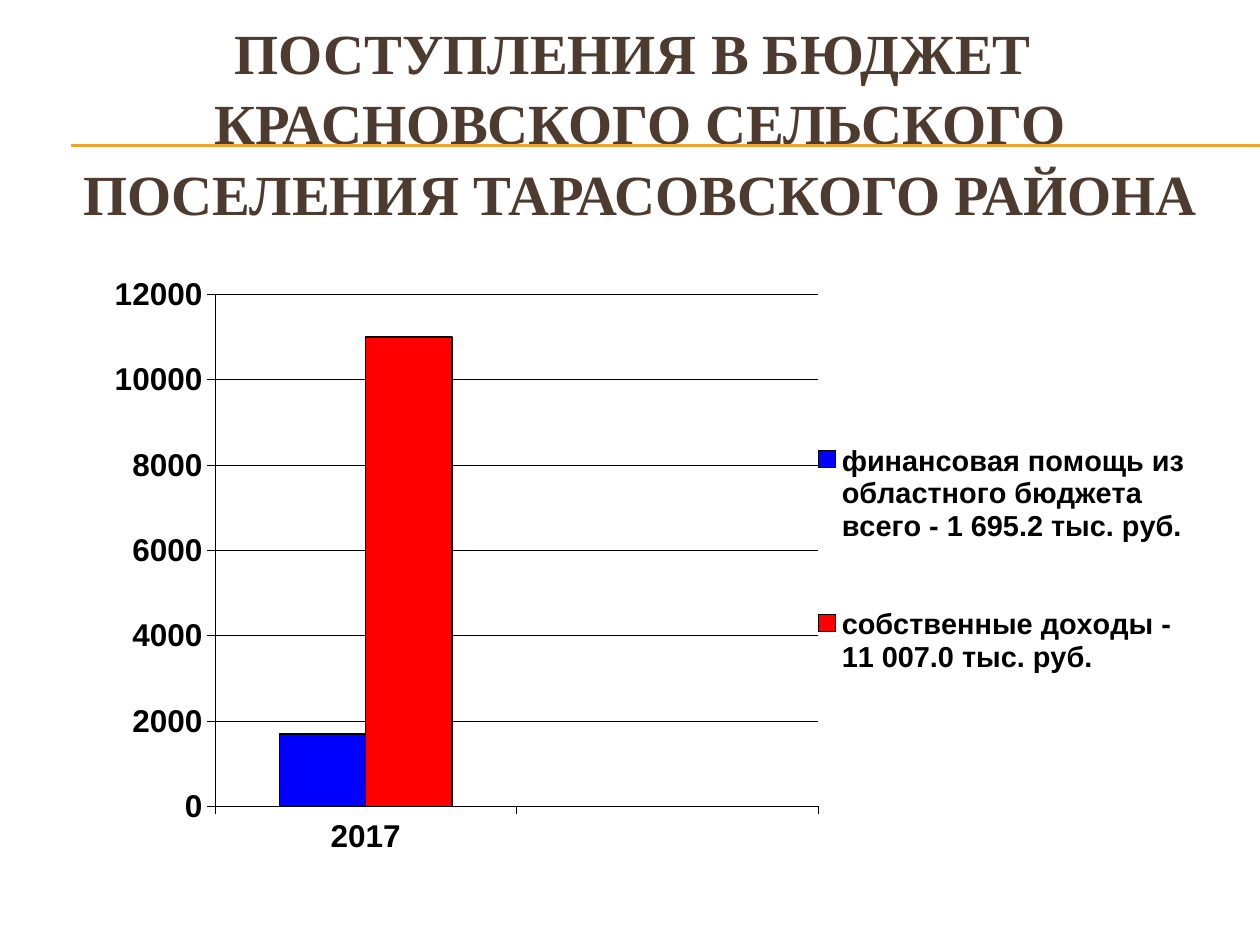
from dataclasses import dataclass

from lxml import etree
from pptx import Presentation
from pptx.chart.data import CategoryChartData
from pptx.dml.color import RGBColor
from pptx.enum.chart import XL_CHART_TYPE, XL_LEGEND_POSITION, XL_TICK_LABEL_POSITION, XL_TICK_MARK
from pptx.enum.shapes import MSO_CONNECTOR
from pptx.enum.text import MSO_ANCHOR, MSO_AUTO_SIZE, PP_ALIGN
from pptx.oxml.ns import qn
from pptx.util import Inches, Pt

COLUMN = XL_CHART_TYPE.COLUMN_CLUSTERED
RIGHT = XL_LEGEND_POSITION.RIGHT
LOW = XL_TICK_LABEL_POSITION.LOW
OUT, NONE = XL_TICK_MARK.OUTSIDE, XL_TICK_MARK.NONE
STRAIGHT = MSO_CONNECTOR.STRAIGHT
MIDDLE = MSO_ANCHOR.MIDDLE
FIXED = MSO_AUTO_SIZE.NONE
CENTER = PP_ALIGN.CENTER


@dataclass(frozen=True)
class Theme:
    brown: str = "4E3B30"
    gold: str = "F0A22E"
    black: str = "000000"
    aid: str = "0000FF"
    own: str = "FF0000"
    serif: str = "Times New Roman"
    sans: str = "Arial"
    head: float = 32.4
    axis: float = 18
    key: float = 16.5


class Deck:
    def __init__(self, theme):
        self.theme = theme
        self.file = Presentation()
        self.file.slide_width = Inches(10)
        self.file.slide_height = Inches(7.5)
        self.slide = self.file.slides.add_slide(self.file.slide_layouts[5])

    def font(self, font, name, size, color):
        font.name, font.size, font.bold = name, Pt(size), True
        font.color.rgb = RGBColor.from_string(color)

    def stroke(self, line, color, width):
        line.color.rgb = RGBColor.from_string(color)
        line.width = Pt(width)

    def rule(self, left, top, right):
        line = self.slide.shapes.add_connector(
            STRAIGHT, Inches(left), Inches(top), Inches(right), Inches(top))
        self.stroke(line.line, self.theme.gold, 0.75)
        etree.SubElement(line.element.spPr, qn("a:effectLst"))

    def title(self, lines, left, top, width, height):
        box = self.slide.shapes.title
        box.left, box.top = Inches(left), Inches(top)
        box.width, box.height = Inches(width), Inches(height)
        frame = box.text_frame
        frame.word_wrap = True
        frame.auto_size = FIXED
        frame.vertical_anchor = MIDDLE
        para = frame.paragraphs[0]
        para.alignment = CENTER
        para.line_spacing = 1.04
        for i, text in enumerate(lines):
            if i:
                para.add_line_break()
            run = para.add_run()
            run.text = text
            self.font(run.font, self.theme.serif, self.theme.head, self.theme.brown)

    def place(self, part, index, box, inner=False):
        """Give a chart part a fixed place, in fractions of the chart."""
        for old in part.findall(qn("c:layout")):
            part.remove(old)
        layout = etree.Element(qn("c:layout"))
        part.insert(index, layout)
        manual = etree.SubElement(layout, qn("c:manualLayout"))
        marks = [("layoutTarget", "inner")] if inner else []
        marks += [("xMode", "edge"), ("yMode", "edge")]
        marks += zip("xywh", box)
        for tag, value in marks:
            etree.SubElement(manual, qn(f"c:{tag}")).set("val", str(value))

    def axis(self, axis):
        axis.major_tick_mark, axis.minor_tick_mark = OUT, NONE
        self.stroke(axis.format.line, self.theme.black, 0.25)
        self.font(axis.tick_labels.font, self.theme.sans, self.theme.axis, self.theme.black)

    def chart(self, cats, series, left, top, width, height):
        theme = self.theme
        data = CategoryChartData()
        data.categories = cats
        for name, values, _ in series:
            data.add_series(name, values)
        chart = self.slide.shapes.add_chart(
            COLUMN, Inches(left), Inches(top), Inches(width), Inches(height), data).chart
        self.font(chart.font, theme.sans, theme.axis, theme.black)
        chart.has_title = False

        # Columns
        plot = chart.plots[0]
        plot.gap_width, plot.overlap = 150, 0
        plot.vary_by_categories = False
        for bar, (_, _, color) in zip(plot.series, series):
            bar.format.fill.solid()
            bar.format.fill.fore_color.rgb = RGBColor.from_string(color)
            self.stroke(bar.format.line, theme.black, 1)

        # Axes
        for axis in (chart.category_axis, chart.value_axis):
            self.axis(axis)
        chart.category_axis.tick_label_position = LOW
        scale = chart.value_axis
        scale.minimum_scale, scale.maximum_scale, scale.major_unit = 0, 12000, 2000
        scale.tick_labels.number_format = "0"
        scale.tick_labels.number_format_is_linked = False
        self.stroke(scale.major_gridlines.format.line, theme.black, 0.25)

        # Legend and plot area
        chart.has_legend = True
        chart.legend.position = RIGHT
        chart.legend.include_in_layout = False
        self.font(chart.legend.font, theme.sans, theme.key, theme.black)
        root = chart.element.find(qn("c:chart"))
        self.place(root.find(qn("c:plotArea")), 0, (0.12, 0.03, 0.54, 0.84), inner=True)
        self.place(root.find(qn("c:legend")), 1, (0.66, 0.17, 0.34, 0.59))


def main():
    theme = Theme()
    deck = Deck(theme)

    # Double rule behind the heading
    for top in (1.15, 1.16):
        deck.rule(0.56, top, 10)

    # Heading
    deck.title(["ПОСТУПЛЕНИЯ В БЮДЖЕТ ",
                "КРАСНОВСКОГО СЕЛЬСКОГО ПОСЕЛЕНИЯ ТАРАСОВСКОГО РАЙОНА"],
               0.33, 0.5, 9.5, 0.92)

    # Budget receipts
    deck.chart(["2017", ""], [
        ("финансовая помощь из областного бюджета всего - 1 695.2 тыс. руб.",
         (1700, None), theme.aid),
        ("собственные доходы - 11 007.0 тыс. руб.", (11000, None), theme.own),
    ], 0.64, 2.19, 8.87, 4.84)

    deck.file.save("out.pptx")


if __name__ == "__main__":
    main()
